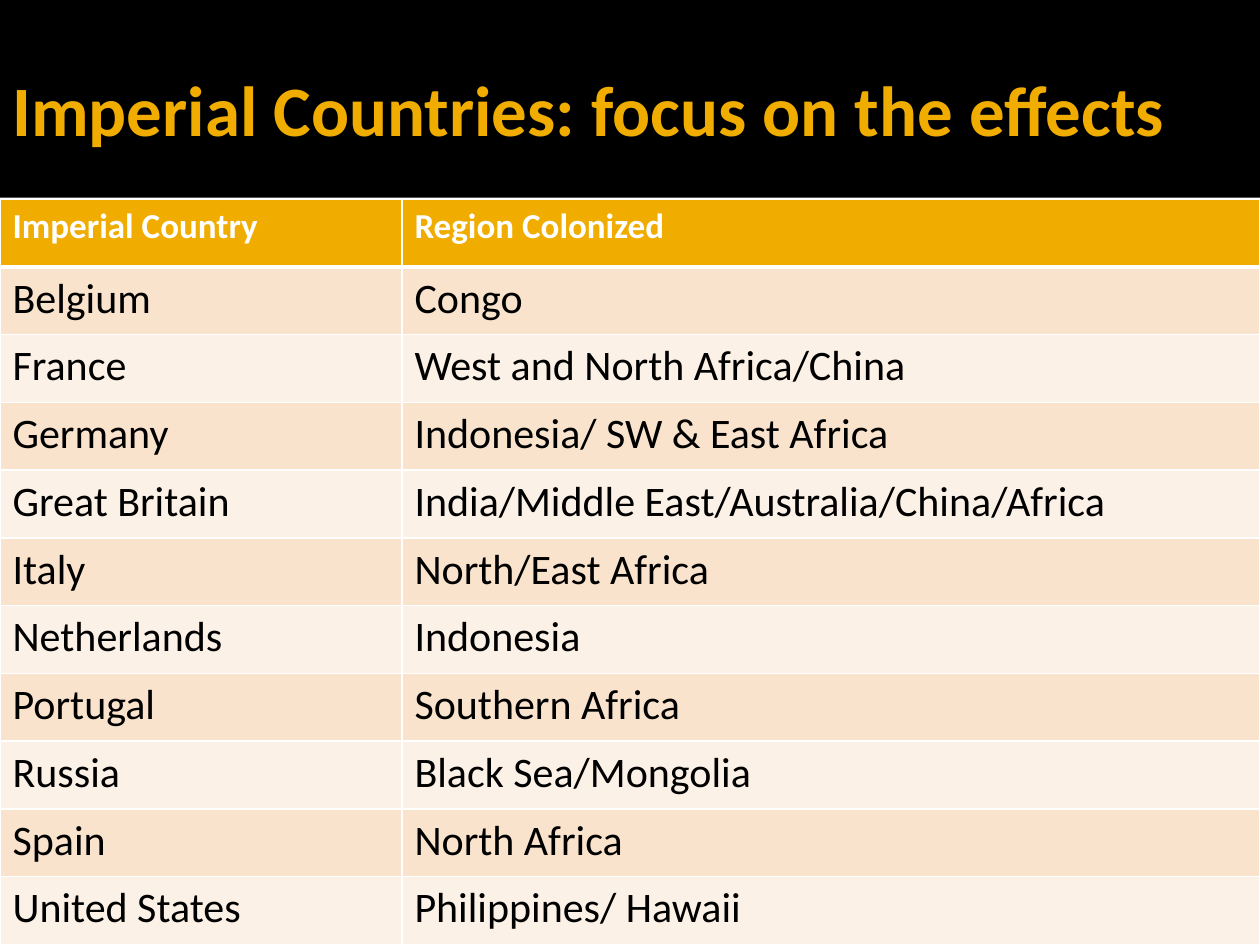
from pptx import Presentation
from pptx.dml.color import RGBColor
from pptx.enum.shapes import MSO_SHAPE
from pptx.enum.text import MSO_ANCHOR
from pptx.oxml.ns import qn
from pptx.util import Inches, Pt
from lxml.etree import SubElement

WIDTH, HEIGHT = Inches(10), Inches(7.5)
BAND_SHARE = 1.57 / 7.5
TABLE_SHARE = 1.58 / 7.5
FIRST_COLUMN_SHARE = 0.319
GOLD, WHITE, BLACK = "F0AD00", "FFFFFF", "000000"
STRIPES = ("F9E3CC", "FCF1E7")

ROWS = [
    ("Imperial Country", "Region Colonized"),
    ("Belgium", "Congo"),
    ("France", "West and North Africa/China"),
    ("Germany", "Indonesia/ SW & East Africa"),
    ("Great Britain", "India/Middle East/Australia/China/Africa"),
    ("Italy", "North/East Africa"),
    ("Netherlands", "Indonesia"),
    ("Portugal", "Southern Africa"),
    ("Russia", "Black Sea/Mongolia"),
    ("Spain", "North Africa"),
    ("United States", "Philippines/ Hawaii"),
]


def color(value):
    return RGBColor.from_string(value)


def add_run(paragraph, text, size, fill, bold):
    run = paragraph.add_run()
    run.text = text
    run.font.name = "Calibri"
    run.font.size = Pt(size)
    run.font.bold = bold
    run.font.color.rgb = color(fill)


def add_bar(slide, left, top, width, height, fill):
    shape = slide.shapes.add_shape(MSO_SHAPE.RECTANGLE, left, top, width, height)
    shape.shadow.inherit = False
    shape.fill.solid()
    shape.fill.fore_color.rgb = color(fill)
    shape.line.fill.background()


def set_borders(cell, widths):
    properties = cell._tc.get_or_add_tcPr()
    for side, points in zip("LRTB", widths):
        line = SubElement(properties, qn(f"a:ln{side}"), w=str(Pt(points)))
        fill = SubElement(line, qn("a:solidFill"))
        SubElement(fill, qn("a:srgbClr"), val=WHITE)


def add_heading(slide, left, top, width, height):
    add_bar(slide, left, top + height, width, Inches(0.05), WHITE)
    add_bar(slide, left, top, width, height, BLACK)
    inset = Inches(0.17)
    title = slide.shapes.add_textbox(left, top + inset, width, Inches(1.37))
    frame = title.text_frame
    frame.word_wrap = True
    frame.vertical_anchor = MSO_ANCHOR.MIDDLE
    frame.margin_left = Inches(0.1)
    frame.margin_right = frame.margin_top = frame.margin_bottom = Inches(0.05)
    add_run(frame.paragraphs[0], "Imperial Countries: focus on the effects", 40.5, GOLD, True)


def add_country_table(slide, left, top, width, height):
    table = slide.shapes.add_table(len(ROWS), 2, left, top, width, height).table
    table.columns[0].width = int(width * FIRST_COLUMN_SHARE)
    table.columns[1].width = width - table.columns[0].width
    for row_index, texts in enumerate(ROWS):
        header = row_index == 0
        table.rows[row_index].height = height // len(ROWS)
        top_width = 3 if row_index == 1 else 1
        bottom_width = 3 if header else 1
        for column_index, text in enumerate(texts):
            cell = table.cell(row_index, column_index)
            set_borders(cell, (1, 1, top_width, bottom_width))
            cell.fill.solid()
            cell.fill.fore_color.rgb = color(GOLD if header else STRIPES[(row_index - 1) % 2])
            size, fill = (20, WHITE) if header else (24, BLACK)
            add_run(cell.text_frame.paragraphs[0], text, size, fill, header)


def main():
    presentation = Presentation()
    presentation.slide_width, presentation.slide_height = WIDTH, HEIGHT
    slide = presentation.slides.add_slide(presentation.slide_layouts[6])
    table_top = int(HEIGHT * TABLE_SHARE)
    add_heading(slide, 0, 0, WIDTH, int(HEIGHT * BAND_SHARE))
    add_country_table(slide, 0, table_top, WIDTH, HEIGHT - table_top)
    presentation.save("out.pptx")


if __name__ == "__main__":
    main()
